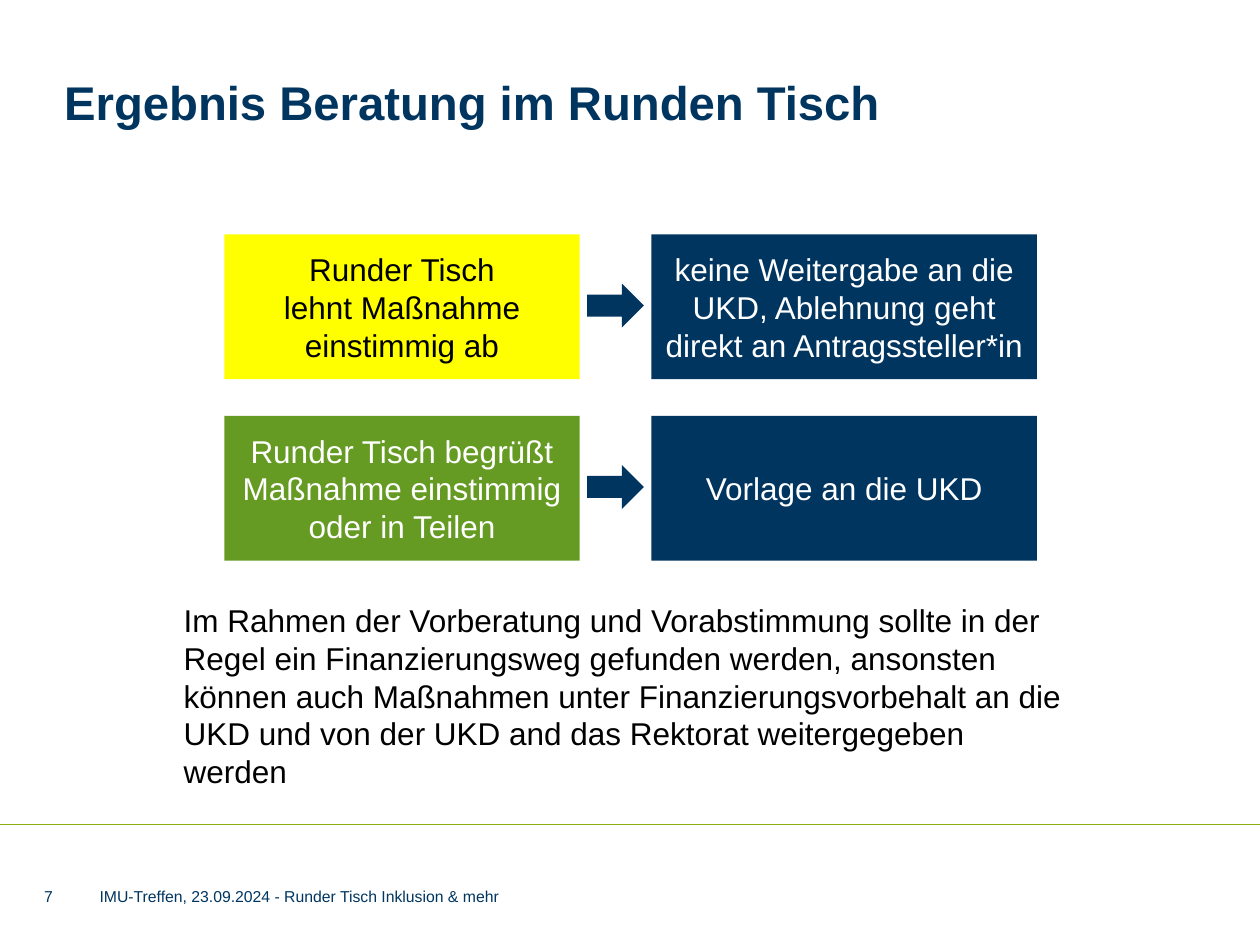
from dataclasses import dataclass

from pptx import Presentation
from pptx.dml.color import RGBColor
from pptx.enum.shapes import MSO_CONNECTOR, MSO_SHAPE
from pptx.enum.text import MSO_ANCHOR as ANCHOR, PP_ALIGN as ALIGN
from pptx.oxml.ns import qn
from pptx.util import Inches, Pt

NAVY = RGBColor(0x00, 0x35, 0x60)
GREEN = RGBColor(0x65, 0x9B, 0x23)
YELLOW = RGBColor(0xFF, 0xFF, 0x00)
OLIVE = RGBColor(0x8D, 0xAE, 0x10)
BLACK = RGBColor(0x00, 0x00, 0x00)
WHITE = RGBColor(0xFF, 0xFF, 0xFF)

ROW_TOP, ROW_PITCH, BOX_H = 1.86, 1.44, 1.15
ARROW_W, ARROW_H = 0.45, 0.35


@dataclass
class Outcome:
    decision: str
    fill: RGBColor
    color: RGBColor
    consequence: str


OUTCOMES = [
    Outcome("Runder Tisch\nlehnt Maßnahme einstimmig ab", YELLOW, BLACK,
            "keine Weitergabe an die UKD, Ablehnung geht direkt an Antragssteller*in"),
    Outcome("Runder Tisch begrüßt Maßnahme einstimmig oder in Teilen", GREEN, WHITE,
            "Vorlage an die UKD"),
]


def write(sp, text: str, *, size: float = 18, color: RGBColor = BLACK,
          bold: bool = False, align=ALIGN.LEFT, anchor=ANCHOR.TOP,
          margins: bool = True) -> None:
    tf = sp.text_frame
    tf.word_wrap = True
    tf.vertical_anchor = anchor
    if not margins:
        tf.margin_left = tf.margin_top = tf.margin_right = tf.margin_bottom = 0
    p = tf.paragraphs[0]
    p.text = text
    p.alignment = align
    for r in p.runs:
        r.font.name = "Arial"
        r.font.size = Pt(size)
        r.font.bold = bold
        r.font.color.rgb = color


def add_block(s, kind, x: float, y: float, w: float, h: float, fill: RGBColor):
    sp = s.shapes.add_shape(kind, Inches(x), Inches(y), Inches(w), Inches(h))
    sp.shadow.inherit = False
    sp.fill.solid()
    sp.fill.fore_color.rgb = fill
    sp.line.fill.background()
    return sp


def add_text(s, x: float, y: float, w: float, h: float, text: str, **fmt) -> None:
    sp = s.shapes.add_textbox(Inches(x), Inches(y), Inches(w), Inches(h))
    write(sp, text, **fmt)


def add_outcome(s, o: Outcome, y: float) -> None:
    centred = dict(align=ALIGN.CENTER, anchor=ANCHOR.MIDDLE)
    sp = add_block(s, MSO_SHAPE.RECTANGLE, 1.78, y, 2.82, BOX_H, o.fill)
    write(sp, o.decision, color=o.color, **centred)
    add_block(s, MSO_SHAPE.RIGHT_ARROW, 4.66, y + 0.39, ARROW_W, ARROW_H, NAVY)
    sp = add_block(s, MSO_SHAPE.RECTANGLE, 5.17, y, 3.06, BOX_H, NAVY)
    write(sp, o.consequence, color=WHITE, **centred)


def main() -> None:
    prs = Presentation()
    prs.slide_width, prs.slide_height = Inches(10), Inches(7.5)
    s = prs.slides.add_slide(prs.slide_layouts[5])

    # Title
    title = s.shapes.title
    title.left, title.top = Inches(0.51), Inches(0.58)
    title.width, title.height = Inches(8.6), Inches(0.68)
    write(title, "Ergebnis Beratung im Runden Tisch",
          size=27, color=NAVY, bold=True, margins=False)

    # Footer rule
    rule = s.shapes.add_connector(MSO_CONNECTOR.STRAIGHT, 0, Inches(6.54),
                                  Inches(10), Inches(6.54))
    rule.line.color.rgb = OLIVE
    rule.line.width = Pt(0.5)
    sp_pr = rule._element.spPr
    sp_pr.append(sp_pr.makeelement(qn("a:effectLst"), {}))

    # Decisions and their consequences
    for i, outcome in enumerate(OUTCOMES):
        add_outcome(s, outcome, ROW_TOP + i * ROW_PITCH)

    # Closing remark
    add_text(s, 1.36, 4.72, 7.28, 1.62,
             "Im Rahmen der Vorberatung und Vorabstimmung sollte in der Regel ein "
             "Finanzierungsweg gefunden werden, ansonsten können auch Maßnahmen unter "
             "Finanzierungsvorbehalt an die UKD und von der UKD and das Rektorat "
             "weitergegeben werden")

    # Footer
    small = dict(size=9, color=NAVY, anchor=ANCHOR.MIDDLE, margins=False)
    add_text(s, 0.35, 7.03, 0.28, 0.16, "7", **small)
    add_text(s, 0.79, 7.03, 6.89, 0.16,
             "IMU-Treffen, 23.09.2024 - Runder Tisch Inklusion & mehr", **small)

    prs.save("out.pptx")


if __name__ == "__main__":
    main()
